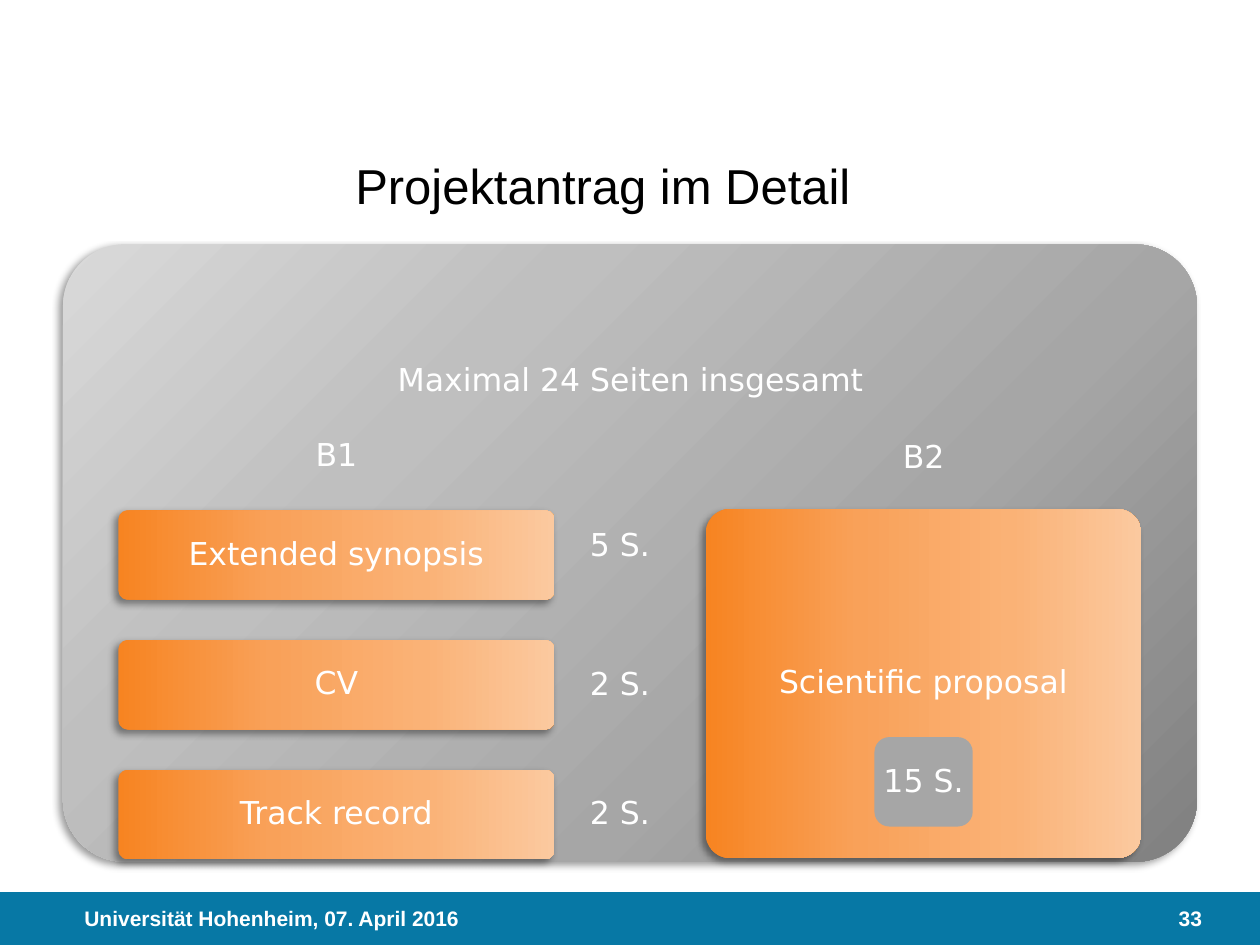
from pptx import Presentation
from pptx.dml.color import RGBColor
from pptx.enum.shapes import MSO_SHAPE
from pptx.enum.text import MSO_ANCHOR, PP_ALIGN
from pptx.oxml import parse_xml
from pptx.oxml.ns import nsdecls, qn
from pptx.util import Inches, Pt

RECT, ROUNDED = MSO_SHAPE.RECTANGLE, MSO_SHAPE.ROUNDED_RECTANGLE
MIDDLE, TOP = MSO_ANCHOR.MIDDLE, MSO_ANCHOR.TOP
LEFT, CENTER, RIGHT = PP_ALIGN.LEFT, PP_ALIGN.CENTER, PP_ALIGN.RIGHT

WHITE = RGBColor(0xFF, 0xFF, 0xFF)
BLACK = RGBColor(0x00, 0x00, 0x00)
BLUE = RGBColor(0x07, 0x78, 0xA5)
GREY = RGBColor(0xA6, 0xA6, 0xA6)
GREYS = [RGBColor(0x80, 0x80, 0x80), GREY, RGBColor(0xBF, 0xBF, 0xBF), RGBColor(0xD9, 0xD9, 0xD9)]
ORANGES = [RGBColor(0xF7, 0x84, 0x21), RGBColor(0xF9, 0xA1, 0x59),
           RGBColor(0xFA, 0xB2, 0x76), RGBColor(0xFB, 0xC9, 0x9F)]
STOPS = [0, 35, 70, 100]
LINEAR = '<a:lin ang="0" scaled="0"/>'
FROM_CORNER = '<a:path path="circle"><a:fillToRect l="100000" t="100000"/></a:path>'

LABEL_FONT = {"size": Pt(18), "name": "DejaVu Sans"}
FOOTER_FONT = {"size": Pt(12), "name": "Arial", "bold": True}
TITLE_FONT = {"size": Pt(28), "name": "Arial", "bold": False}
MARGINS = ["margin_left", "margin_top", "margin_right", "margin_bottom"]


def write(shape, text, font, color=WHITE, align=CENTER, anchor=MIDDLE, wrap=False, spacing=0.9):
    frame = shape.text_frame
    frame.text = text
    frame.word_wrap = wrap
    frame.vertical_anchor = anchor
    paragraph = frame.paragraphs[0]
    paragraph.alignment = align
    paragraph.line_spacing = spacing
    for attribute, value in font.items():
        setattr(paragraph.font, attribute, value)
    paragraph.font.color.rgb = color


def add_card(at, colors, direction, corner):
    card = slide.shapes.add_shape(ROUNDED, *map(Inches, at))
    card.adjustments[0] = corner
    card.line.fill.background()
    card.shadow.inherit = False
    card.fill.gradient()
    properties = card.fill._xPr
    stops = "".join(f'<a:gs pos="{stop * 1000}"><a:srgbClr val="{color}"/></a:gs>'
                    for stop, color in zip(STOPS, colors))
    properties.replace(properties.find(qn("a:gradFill")), parse_xml(
        f'<a:gradFill {nsdecls("a")} rotWithShape="1"><a:gsLst>{stops}</a:gsLst>{direction}</a:gradFill>'))
    properties.find(qn("a:effectLst")).append(parse_xml(
        f'<a:outerShdw {nsdecls("a")} blurRad="{Pt(4)}" dist="{Pt(3)}" dir="8100000" rotWithShape="0">'
        '<a:srgbClr val="000000"><a:alpha val="40000"/></a:srgbClr></a:outerShdw>'))
    return card


prs = Presentation()
prs.slide_width, prs.slide_height = Inches(10), Inches(7.5)
slide = prs.slides.add_slide(prs.slide_layouts[5])

footer_band = slide.shapes.add_shape(RECT, Inches(0), Inches(7.08), Inches(10), Inches(0.42))
footer_band.fill.solid()
footer_band.fill.fore_color.rgb = BLUE
footer_band.line.fill.background()
footer_band.shadow.inherit = False

for text, left, width, align in [("33", 6.98, 2.56, RIGHT),
                                 ("Universität Hohenheim, 07. April 2016", 0.67, 3.14, LEFT)]:
    footer = slide.shapes.add_textbox(Inches(left), Inches(7.08), Inches(width), Inches(0.42))
    for margin in MARGINS:
        setattr(footer.text_frame, margin, 0)
    write(footer, text, FOOTER_FONT, align=align, wrap=True, spacing=1.0)

add_card((0.5, 1.94, 9, 4.9), GREYS, FROM_CORNER, 0.1)

title = slide.shapes.title
title.left, title.top, title.width, title.height = map(Inches, (2.72, 1.23, 5, 0.48))
write(title, "Projektantrag im Detail", TITLE_FONT, BLACK, LEFT, wrap=True, spacing=1.0)

for row, part in enumerate(["Extended synopsis", "CV", "Track record"]):
    part_card = add_card((0.94, 4.05 + row * 1.03, 3.46, 0.71), ORANGES, LINEAR, 0.1)
    write(part_card, part, LABEL_FONT)

proposal = add_card((5.6, 4.04, 3.46, 2.77), ORANGES, LINEAR, 0.07)
write(proposal, "Scientific proposal", LABEL_FONT)

limit = slide.shapes.add_textbox(Inches(3.05), Inches(2.81), Inches(3.91), Inches(0.4))
write(limit, "Maximal 24 Seiten insgesamt", LABEL_FONT, anchor=TOP, wrap=True, spacing=1.0)

for text, left, top in [("5 S.", 4.53, 3.98), ("2 S.", 4.53, 5.08), ("2 S.", 4.53, 6.11),
                        ("B1", 2.28, 3.27), ("B2", 6.94, 3.28)]:
    label = slide.shapes.add_textbox(Inches(left), Inches(top), Inches(0.78), Inches(0.71))
    write(label, text, LABEL_FONT)

proposal_pages = slide.shapes.add_shape(ROUNDED, Inches(6.94), Inches(5.85), Inches(0.78), Inches(0.71))
proposal_pages.fill.solid()
proposal_pages.fill.fore_color.rgb = GREY
proposal_pages.line.fill.background()
proposal_pages.shadow.inherit = False
write(proposal_pages, "15 S.", LABEL_FONT)

prs.save("out.pptx")
